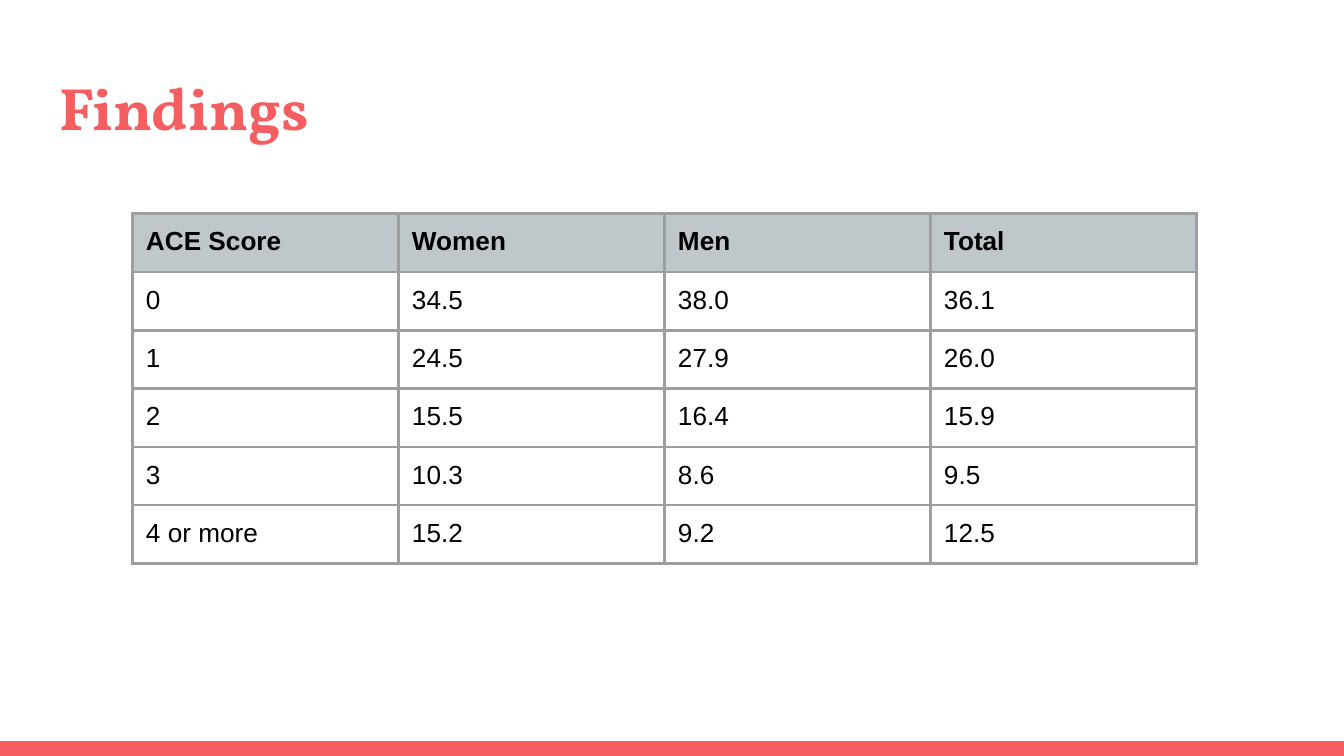
import pptx
import pptx.dml.color
import pptx.enum.shapes
import pptx.enum.text
import pptx.oxml
import pptx.oxml.ns
import pptx.util

COLORS = {"accent": "F55E61", "header": "BFC7CA", "border": "9E9E9E",
          "text": "000000", "background": "FFFFFF"}
WIDTH = pptx.util.Inches(10)
HEIGHT = WIDTH * 9 // 16
INSET = pptx.util.Inches(0.1)


def color(name):
    return pptx.dml.color.RGBColor.from_string(COLORS[name])


def write_text(frame, text, font="Arial", size=14, fill="text", bold=False):
    frame.word_wrap = True
    frame.vertical_anchor = pptx.enum.text.MSO_ANCHOR.TOP
    paragraph = frame.paragraphs[0]
    paragraph.alignment = pptx.enum.text.PP_ALIGN.LEFT
    run = paragraph.add_run()
    run.text = text
    run.font.name = font
    run.font.size = pptx.util.Pt(size)
    run.font.bold = bold
    run.font.color.rgb = color(fill)


presentation = pptx.Presentation()
presentation.slide_width, presentation.slide_height = WIDTH, HEIGHT
slide = presentation.slides.add_slide(presentation.slide_layouts[6])
slide.background.fill.solid()
slide.background.fill.fore_color.rgb = color("background")

# Bar along the bottom edge
bar_height = pptx.util.Inches(0.11)
bar = slide.shapes.add_shape(pptx.enum.shapes.MSO_SHAPE.RECTANGLE,
                             0, HEIGHT - bar_height, WIDTH, bar_height)
bar.shadow.inherit = False
bar.fill.solid()
bar.fill.fore_color.rgb = color("accent")
bar.line.fill.background()

# Title
margin = pptx.util.Pt(24.54)
title = slide.shapes.add_textbox(margin, pptx.util.Inches(0.43),
                                 WIDTH - 2 * margin, pptx.util.Inches(0.68))
frame = title.text_frame
frame.margin_left = frame.margin_right = INSET
frame.margin_top = frame.margin_bottom = INSET
write_text(frame, "Findings", font="Vollkorn", size=32, fill="accent", bold=True)

# Table of scores
rows = [
    ["ACE Score", "Women", "Men", "Total"],
    ["0", "34.5", "38.0", "36.1"],
    ["1", "24.5", "27.9", "26.0"],
    ["2", "15.5", "16.4", "15.9"],
    ["3", "10.3", "8.6", "9.5"],
    ["4 or more", "15.2", "9.2", "12.5"],
]
column_width, row_height = pptx.util.Pt(142.5), pptx.util.Pt(30)
table_frame = slide.shapes.add_table(
    len(rows), len(rows[0]), pptx.util.Pt(71), pptx.util.Inches(1.59),
    column_width * len(rows[0]), row_height * len(rows))
table = table_frame.table
for column in table.columns:
    column.width = column_width

for row_index, values in enumerate(rows):
    table.rows[row_index].height = row_height
    is_header = row_index == 0
    for column_index, value in enumerate(values):
        cell = table.cell(row_index, column_index)
        cell.margin_left = cell.margin_right = INSET
        cell.margin_top = cell.margin_bottom = INSET
        write_text(cell.text_frame, value, bold=is_header)

        # Borders come before the fill in the cell properties
        properties = cell._tc.get_or_add_tcPr()
        for side in ("lnL", "lnR", "lnT", "lnB"):
            properties.append(pptx.oxml.parse_xml(
                f'<a:{side} {pptx.oxml.ns.nsdecls("a")} w="{pptx.util.Pt(1.5)}">'
                f'<a:solidFill><a:srgbClr val="{COLORS["border"]}"/></a:solidFill>'
                f'</a:{side}>'))
        if is_header:
            cell.fill.solid()
            cell.fill.fore_color.rgb = color("header")
        else:
            cell.fill.background()

# The rows and columns set the drawn size; the frame keeps a square size
table_frame.width = table_frame.height = pptx.util.Inches(3.28)

presentation.save("out.pptx")
